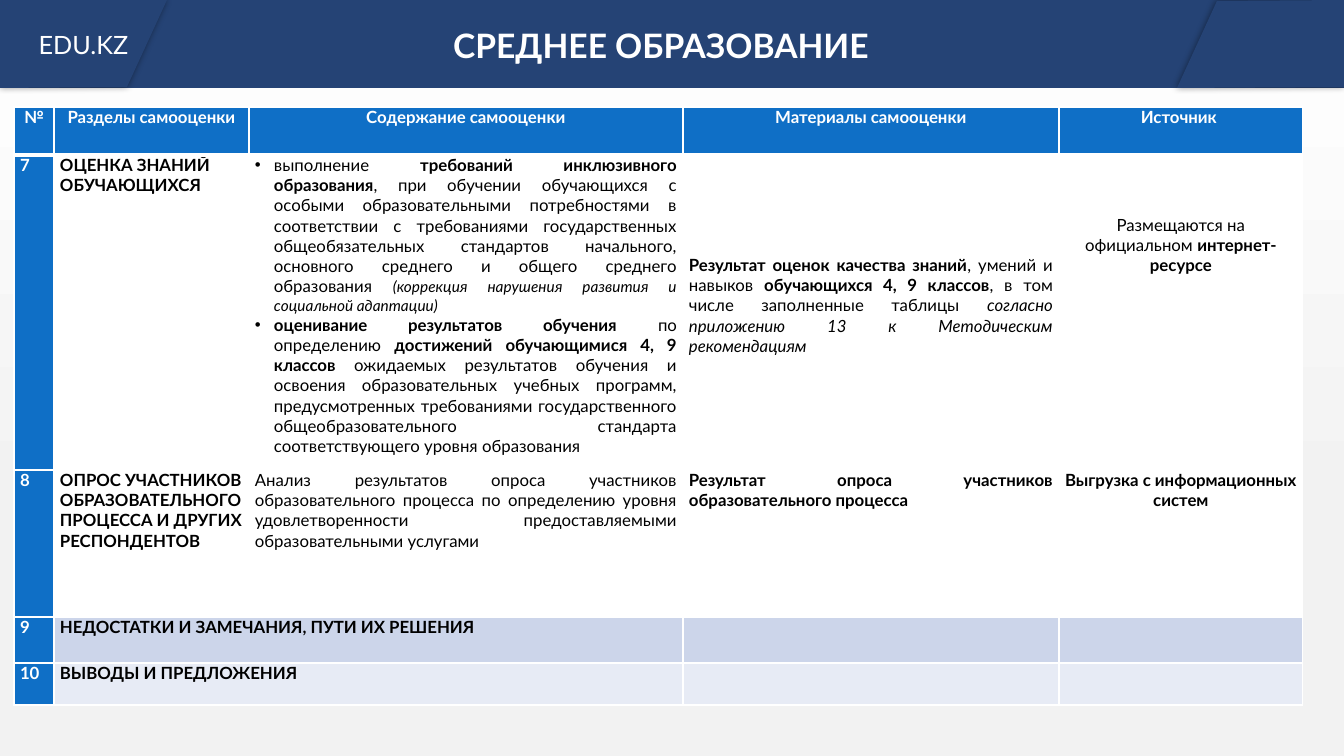
from lxml.etree import SubElement
from pptx import Presentation
from pptx.dml.color import RGBColor
from pptx.enum.shapes import MSO_SHAPE
from pptx.enum.text import MSO_ANCHOR, PP_ALIGN
from pptx.oxml.ns import qn
from pptx.util import Emu, Pt

FONT = "Lato"
COLORS = {"navy": "254375", "blue": "0F6FC6", "white": "FFFFFF", "black": "000000",
          "page": "F2F2F2", "lilac": "CCD5EA", "pale": "E7EBF5"}
SITE = "EDU.KZ"
TITLE = "СРЕДНЕЕ ОБРАЗОВАНИЕ "
BADGES = [
    (SITE, [(0, 0), (0, 88), (127, 87), (167, 0)]),
    ("", [(1344, 87), (1344, 0), (1217, 1), (1177, 88)]),
]
TABLE_LEFT, TABLE_TOP = 14, 107
COLUMNS = [40, 195, 434, 376, 244]
ROWS = [48, 315, 147, 46, 42]
ROW_FILLS = ["blue", "white", "white", "lilac", "pale"]
HEADERS = ["№", "Разделы самооценки", "Содержание самооценки", "Материалы самооценки", "Источник "]
LINE = 20

INCLUSION = [
    ("выполнение ", ""),
    ("требований инклюзивного образования", "bold"),
    (", при обучении обучающихся с особыми образовательными потребностями в соответствии с "
     "требованиями государственных общеобязательных стандартов начального, основного среднего "
     "и общего среднего образования ", ""),
    ("(коррекция нарушения развития и социальной адаптации)", "small italic"),
]
RESULTS = [
    ("оценивание результатов обучения ", "bold"),
    ("по определению ", ""),
    ("достижений обучающимися 4, 9 классов ", "bold"),
    ("ожидаемых результатов обучения и освоения образовательных учебных программ, "
     "предусмотренных требованиями государственного общеобразовательного стандарта "
     "соответствующего уровня образования", ""),
]
MATERIALS = [
    ("Результат оценок качества знаний", "bold"),
    (", умений и навыков ", ""),
    ("обучающихся 4, 9 классов", "bold"),
    (", в том числе заполненные таблицы ", ""),
    ("согласно приложению 13 к Методическим рекомендациям", "italic"),
]
SOURCE = [("Размещаются на официальном ", ""), ("интернет-ресурсе", "bold")]
SURVEY = ("Анализ результатов опроса участников образовательного процесса по определению уровня "
          "удовлетворенности предоставляемыми образовательными услугами")
SECTIONS = [
    ("7", "ОЦЕНКА ЗНАНИЙ ОБУЧАЮЩИХСЯ"),
    ("8", "ОПРОС УЧАСТНИКОВ ОБРАЗОВАТЕЛЬНОГО ПРОЦЕССА И ДРУГИХ РЕСПОНДЕНТОВ"),
    ("9", "НЕДОСТАТКИ И ЗАМЕЧАНИЯ, ПУТИ ИХ РЕШЕНИЯ"),
    ("10", "ВЫВОДЫ И ПРЕДЛОЖЕНИЯ"),
]
DETAILS = [
    (1, 2, [INCLUSION, RESULTS], PP_ALIGN.JUSTIFY, 0),
    (1, 3, [MATERIALS], PP_ALIGN.JUSTIFY, 5),
    (1, 4, [SOURCE], PP_ALIGN.CENTER, 3),
    (2, 2, [[(SURVEY, "")]], PP_ALIGN.JUSTIFY, 0),
    (2, 3, [[("Результат опроса участников образовательного процесса", "bold")]], PP_ALIGN.JUSTIFY, 0),
    (2, 4, [[("Выгрузка с информационных систем", "bold")]], PP_ALIGN.CENTER, 0),
]


def px(value):
    return Emu(round(value * 914400 / 100.8))


def rgb(name):
    return RGBColor.from_string(COLORS[name])


def paint(shape, color):
    shape.shadow.inherit = False
    shape.fill.solid()
    shape.fill.fore_color.rgb = rgb(color)
    shape.line.fill.background()


def add_glow(shape):
    effects = shape.element.spPr.find(qn("a:effectLst"))
    shadow = SubElement(effects, qn("a:outerShdw"), blurRad=str(Pt(5)), dist="0", dir="0")
    color = SubElement(shadow, qn("a:srgbClr"), val=COLORS["black"])
    SubElement(color, qn("a:alpha"), val="40000")


def set_font(paragraph, size, color, bold=None):
    font = paragraph.font
    font.name, font.size, font.bold = FONT, Pt(size), bold
    font.color.rgb = rgb(color)


def add_bullet(paragraph):
    properties = paragraph._p.get_or_add_pPr()
    properties.set("marL", str(px(19)))
    properties.set("indent", str(-px(19)))
    SubElement(properties, qn("a:buFont"), typeface="Arial")
    SubElement(properties, qn("a:buChar"), char="•")


def fill_cell(cell, paragraphs, alignment, color):
    for index, runs in enumerate(paragraphs):
        frame = cell.text_frame
        paragraph = frame.add_paragraph() if index else frame.paragraphs[0]
        paragraph.alignment = alignment
        if len(paragraphs) > 1:
            add_bullet(paragraph)
        set_font(paragraph, 12, color)
        for text, style in runs:
            run = paragraph.add_run()
            run.text = text
            run.font.bold = "bold" in style
            if "italic" in style:
                run.font.italic = True
            if "small" in style:
                run.font.size = Pt(11)


def format_cell(cell, fill, header):
    cell.margin_left = cell.margin_right = px(6)
    cell.margin_top = cell.margin_bottom = 0
    properties = cell._tc.get_or_add_tcPr()
    for side in ("lnL", "lnR", "lnT", "lnB"):
        width = Pt(3 if header and side == "lnB" else 1)
        border = SubElement(properties, qn(f"a:{side}"), w=str(width))
        SubElement(SubElement(border, qn("a:solidFill")), qn("a:srgbClr"), val=COLORS["white"])
    cell.fill.solid()
    cell.fill.fore_color.rgb = rgb(fill)


def add_header(slide):
    band = slide.shapes.add_shape(MSO_SHAPE.RECTANGLE, 0, 0, px(1344), px(88))
    paint(band, "navy")
    for text, points in BADGES:
        corners = [(px(x), px(y)) for x, y in points]
        builder = slide.shapes.build_freeform(*corners[0])
        builder.add_line_segments(corners[1:], close=True)
        badge = builder.convert_to_shape()
        paint(badge, "navy")
        add_glow(badge)
        if text:
            badge.text_frame.text = text
            badge.text_frame.vertical_anchor = MSO_ANCHOR.MIDDLE
            paragraph = badge.text_frame.paragraphs[0]
            paragraph.alignment = PP_ALIGN.CENTER
            set_font(paragraph, 18, "white")
    title = slide.shapes.add_textbox(px(325), px(17), px(680), px(105))
    title.text_frame.word_wrap = True
    title.text_frame.text = TITLE
    paragraph = title.text_frame.paragraphs[0]
    paragraph.alignment = PP_ALIGN.CENTER
    paragraph.line_spacing = 1.07
    set_font(paragraph, 24, "white", True)


def add_assessment_table(slide):
    table = slide.shapes.add_table(len(ROWS), len(COLUMNS), px(TABLE_LEFT), px(TABLE_TOP),
                                   px(sum(COLUMNS)), px(sum(ROWS))).table
    table.first_row = table.horz_banding = False
    for column, width in zip(table.columns, COLUMNS):
        column.width = px(width)
    for row_index, height in enumerate(ROWS):
        table.rows[row_index].height = px(height)
        for column_index in range(len(COLUMNS)):
            fill = ROW_FILLS[row_index] if column_index else "blue"
            format_cell(table.cell(row_index, column_index), fill, row_index == 0)
    for column_index, text in enumerate(HEADERS):
        fill_cell(table.cell(0, column_index), [[(text, "bold")]], PP_ALIGN.CENTER, "white")
    for row_index, (number, name) in enumerate(SECTIONS, 1):
        fill_cell(table.cell(row_index, 0), [[(number, "bold")]], PP_ALIGN.LEFT, "white")
        fill_cell(table.cell(row_index, 1), [[(name, "bold")]], PP_ALIGN.LEFT, "black")
    for row_index, column_index, paragraphs, alignment, lines_down in DETAILS:
        cell = table.cell(row_index, column_index)
        cell.margin_top = px(lines_down * LINE)
        fill_cell(cell, paragraphs, alignment, "black")
    for row_index in (3, 4):
        table.cell(row_index, 1).merge(table.cell(row_index, 2))


def main():
    presentation = Presentation()
    presentation.slide_width, presentation.slide_height = px(1344), px(756)
    slide = presentation.slides.add_slide(presentation.slide_layouts[6])
    background = slide.background.fill
    background.gradient()
    background.gradient_angle = 270
    for stop, position, color in zip(background.gradient_stops, (0, 0.68), ("white", "page")):
        stop.position = position
        stop.color.rgb = rgb(color)
    add_header(slide)
    add_assessment_table(slide)
    presentation.save("out.pptx")


if __name__ == "__main__":
    main()
